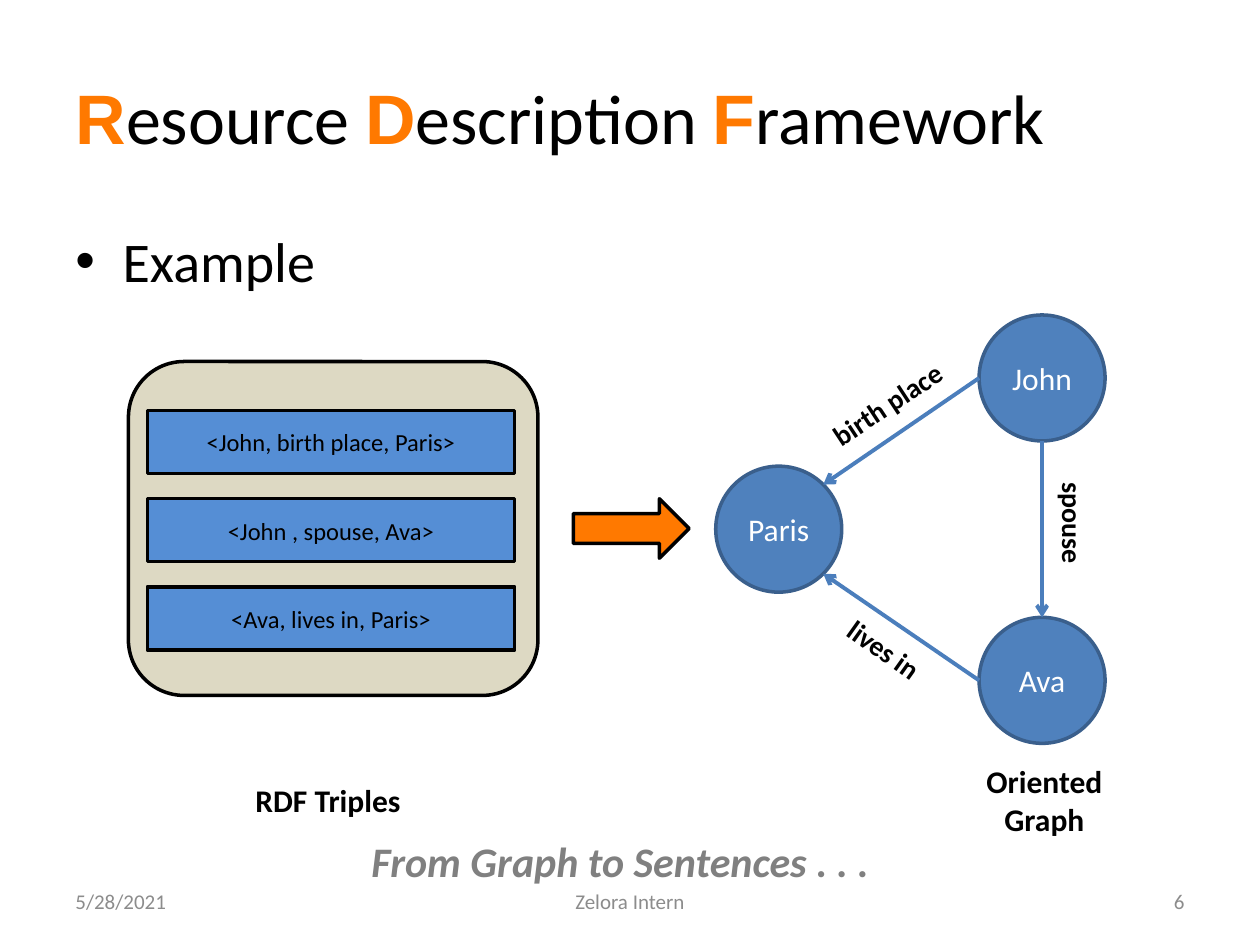
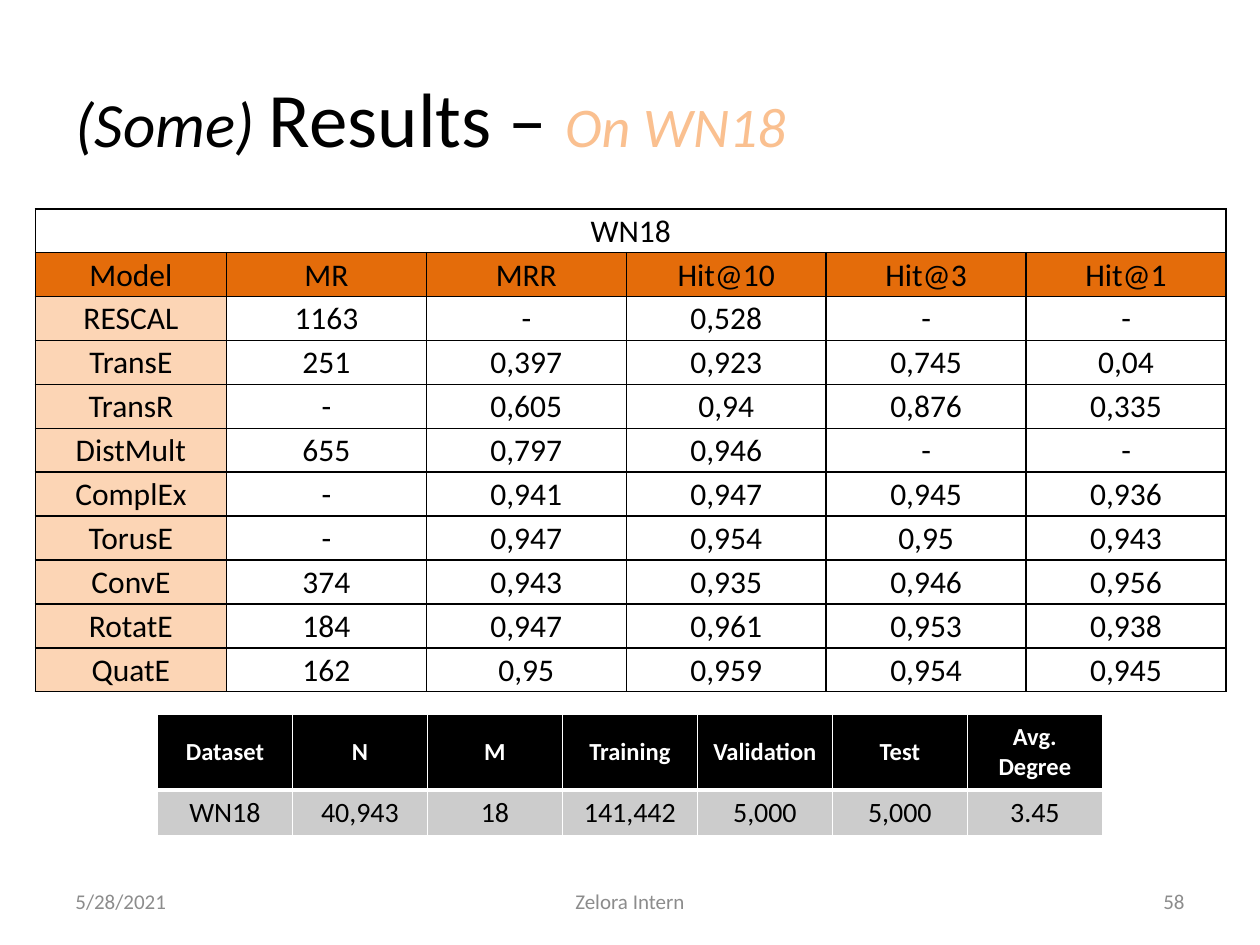
from lxml.etree import SubElement
from pptx import Presentation
from pptx.dml.color import RGBColor
from pptx.enum.shapes import MSO_CONNECTOR, MSO_SHAPE
from pptx.enum.text import MSO_ANCHOR, MSO_AUTO_SIZE, PP_ALIGN
from pptx.oxml.ns import qn
from pptx.util import Pt

FONT = "Calibri"
BLACK, WHITE, GREY, FOOTER_GREY = "000000", "FFFFFF", "808080", "8C8C8C"
ORANGE, HEADER_ORANGE, PALE_ORANGE, TITLE_ORANGE = "FF7900", "E46C0A", "FCD5B5", "FAC090"
BEIGE, TRIPLE_BLUE = "DDD9C3", "558ED5"
NODE_BLUE, NODE_LINE, EDGE_BLUE = "4F81BD", "3A5F8C", "4B7EBC"
DATASET_GREY = "CCCCCC"
LEFT, CENTER, RIGHT = PP_ALIGN.LEFT, PP_ALIGN.CENTER, PP_ALIGN.RIGHT

RESULTS = """Model MR MRR Hit@10 Hit@3 Hit@1
RESCAL 1163 - 0,528 - -
TransE 251 0,397 0,923 0,745 0,04
TransR - 0,605 0,94 0,876 0,335
DistMult 655 0,797 0,946 - -
ComplEx - 0,941 0,947 0,945 0,936
TorusE - 0,947 0,954 0,95 0,943
ConvE 374 0,943 0,935 0,946 0,956
RotatE 184 0,947 0,961 0,953 0,938
QuatE 162 0,95 0,959 0,954 0,945"""

DATASET = [
    ["Dataset", "N", "M", "Training", "Validation", "Test", "Avg. Degree"],
    ["WN18", "40,943", "18", "141,442", "5,000", "5,000", "3.45"],
]


def rgb(code):
    """Turn a hex string into a colour."""
    return RGBColor.from_string(code)


def style(font, size, color=BLACK, bold=False, italic=False, name=FONT):
    """Set the look of a paragraph or run font."""
    font.name, font.size, font.bold, font.italic = name, Pt(size), bold, italic
    font.color.rgb = rgb(color)


def add_text(s, box, text, size, color=BLACK, align=LEFT, anchor=MSO_ANCHOR.TOP,
             rotation=0, **look):
    """Add a wrapped text box with one paragraph per line."""
    tb = s.shapes.add_textbox(*map(Pt, box))
    tb.rotation = rotation
    tf = tb.text_frame
    tf.word_wrap, tf.vertical_anchor, tf.text = True, anchor, text
    for p in tf.paragraphs:
        p.alignment = align
        style(p.font, size, color, **look)
    return tb


def add_block(s, kind, box, fill, line=BLACK, text="", size=14, color=BLACK):
    """Add a filled, outlined preset shape with centred text."""
    sp = s.shapes.add_shape(kind, *map(Pt, box))
    sp.shadow.inherit = False
    sp.fill.solid()
    sp.fill.fore_color.rgb = rgb(fill)
    sp.line.color.rgb, sp.line.width = rgb(line), Pt(2)
    if text:
        tf = sp.text_frame
        tf.text, tf.vertical_anchor = text, MSO_ANCHOR.MIDDLE
        tf.paragraphs[0].alignment = CENTER
        style(tf.paragraphs[0].font, size, color)


def add_edge(s, start, end):
    """Add a straight arrow between two points."""
    c = s.shapes.add_connector(MSO_CONNECTOR.STRAIGHT, *map(Pt, start + end))
    c.line.color.rgb, c.line.width = rgb(EDGE_BLUE), Pt(2.25)
    sp_pr = c._element.spPr
    SubElement(sp_pr.find(qn("a:ln")), qn("a:tailEnd"), type="arrow")
    SubElement(sp_pr, qn("a:effectLst"))


def new_slide(prs, title_runs, number):
    """Add a slide with its mixed-style title and footer."""
    s = prs.slides.add_slide(prs.slide_layouts[5])
    title = s.shapes.title
    title.left, title.top, title.width, title.height = map(Pt, (36, 21.6, 648, 90))
    tf = title.text_frame
    tf.auto_size, tf.vertical_anchor = MSO_AUTO_SIZE.NONE, MSO_ANCHOR.MIDDLE
    p = tf.paragraphs[0]
    p.alignment = LEFT
    for text, look in title_runs:
        r = p.add_run()
        r.text = text
        style(r.font, **look)
    footer = [(36, 168, "5/28/2021", LEFT), (246, 228, "Zelora Intern", CENTER),
              (516, 168, number, RIGHT)]
    for x, w, text, align in footer:
        add_text(s, (x, 500.5, w, 28.75), text, 12, FOOTER_GREY, align, MSO_ANCHOR.MIDDLE)
    return s


def add_bullet(s, box, text):
    """Add a large bulleted line."""
    p = add_text(s, box, "", 32).text_frame.paragraphs[0]
    p.text = text
    p_pr = p._p.get_or_add_pPr()
    p_pr.set("marL", str(Pt(27)))
    p_pr.set("indent", str(-Pt(27)))
    for old in p_pr.findall(qn("a:defRPr")):
        p_pr.remove(old)
    SubElement(p_pr, qn("a:buFont"), typeface="Arial")
    SubElement(p_pr, qn("a:buChar"), char="•")
    style(p.font, 32)


def add_triples(s, x, y, w, h):
    """Draw the panel of triples and its caption."""
    add_block(s, MSO_SHAPE.ROUNDED_RECTANGLE, (x, y, w, h), BEIGE)
    triples = ["<John, birth place, Paris>", "<John , spouse, Ava>", "<Ava, lives in, Paris>"]
    for i, triple in enumerate(triples):
        add_block(s, MSO_SHAPE.RECTANGLE, (x + 10.8, y + 28 + 50.4 * i, 210, 36),
                  TRIPLE_BLUE, text=triple)
    add_text(s, (x + 65.5, y + 236, 102, 29), "RDF Triples", 18, bold=True)


def add_graph(s, x, y, w, h):
    """Draw the oriented graph with its labels and caption."""
    d = 72
    right, middle, bottom = x + w - d, y + (h - d) / 2, y + h - d
    nodes = [("John", right, y), ("Paris", x, middle), ("Ava", right, bottom)]
    for name, nx, ny in nodes:
        add_block(s, MSO_SHAPE.OVAL, (nx, ny, d, d), NODE_BLUE, NODE_LINE, name, 18, WHITE)
    reach = d / 2 * 0.5 ** 0.5
    cx, cy = x + d / 2, middle + d / 2
    add_edge(s, (right, y + d / 2), (cx + reach, cy - reach))
    add_edge(s, (right + d / 2, y + d), (right + d / 2, bottom))
    add_edge(s, (right, bottom + d / 2), (cx + reach, cy + reach))
    labels = [("birth place", 54.7, 35.3, 93.6, 326.6), ("spouse", 170.6, 108.7, 67, 90),
              ("lives in", 65.5, 180, 67, 35.4)]
    for text, dx, dy, lw, angle in labels:
        add_text(s, (x + dx, y + dy, lw, 26.6), text, 16, rotation=angle, bold=True)
    add_text(s, (x + 136.8, y + h + 7, 102, 51), "Oriented\nGraph", 18, align=CENTER, bold=True)


def fill_cell(cell, text, size, fill, color, borders, bold=False):
    """Write one centred table cell with borders given as side: (colour, width)."""
    tc_pr = cell._tc.get_or_add_tcPr()
    for side, (line, width) in borders.items():
        ln = SubElement(tc_pr, qn("a:ln" + side), w=str(Pt(width)))
        SubElement(SubElement(ln, qn("a:solidFill")), qn("a:srgbClr"), val=line)
    if fill:
        cell.fill.solid()
        cell.fill.fore_color.rgb = rgb(fill)
    else:
        cell.fill.background()
    cell.vertical_anchor = MSO_ANCHOR.MIDDLE
    p = cell.text_frame.paragraphs[0]
    p.text, p.alignment = text, CENTER
    style(p.font, size, color, bold)


def add_grid(s, box, col_widths, row_heights):
    """Add a plain table with the given column widths and row heights."""
    table = s.shapes.add_table(len(row_heights), len(col_widths), *map(Pt, box)).table
    table.first_row = table.horz_banding = False
    for col, w in zip(table.columns, col_widths):
        col.width = Pt(w)
    for row, h in zip(table.rows, row_heights):
        row.height = Pt(h)
    return table


def add_results(s, x, y, w, h):
    """Draw the table of model scores."""
    rows = [["WN18"] + [""] * 5] + [line.split() for line in RESULTS.splitlines()]
    first = 109.2
    table = add_grid(s, (x, y, w, h), [first] + [(w - first) / 5] * 5,
                     [h / len(rows)] * len(rows))
    table.cell(0, 0).merge(table.cell(0, 5))
    borders = dict.fromkeys("LRTB", (BLACK, 1))
    for i, row in enumerate(rows):
        for j, text in enumerate(row):
            cell = table.cell(i, j)
            cell.margin_left = cell.margin_right = cell.margin_top = Pt(0.72)
            cell.margin_bottom = Pt(0)
            fill = HEADER_ORANGE if i == 1 else PALE_ORANGE if i and j == 0 else None
            fill_cell(cell, text, 18, fill, BLACK, borders)


def add_dataset(s, x, y, w, h):
    """Draw the table of dataset statistics."""
    n = len(DATASET[0])
    header_h = 43.2
    table = add_grid(s, (x, y, w, h), [w / n] * n, [header_h, h - header_h])
    thin, thick = (WHITE, 1), (WHITE, 3)
    looks = [(14, BLACK, WHITE, dict(L=thin, R=thin, T=thin, B=thick), True),
             (16, DATASET_GREY, BLACK, dict(L=thin, R=thin, T=thick, B=thin), False)]
    for i, (row, look) in enumerate(zip(DATASET, looks)):
        for j, text in enumerate(row):
            fill_cell(table.cell(i, j), text, *look)


def rdf_slide(prs):
    """Build the slide that turns triples into a graph."""
    initial = dict(size=40, color=ORANGE, bold=True, name="Arial")
    title = []
    for word in ("Resource ", "Description ", "Framework"):
        title += [(word[0], initial), (word[1:], dict(size=40))]
    s = new_slide(prs, title, "6")
    add_bullet(s, (36, 126, 648, 356), "Example")
    add_triples(s, 73.4, 206.6, 234, 190.8)
    add_block(s, MSO_SHAPE.RIGHT_ARROW, (327.6, 285, 66.2, 34), ORANGE)
    add_graph(s, 409, 180, 222.5, 244.8)
    add_text(s, (205.2, 473.8, 318, 36), "From Graph to Sentences . . .", 24, GREY,
             bold=True, italic=True)


def results_slide(prs):
    """Build the slide with the scores and the dataset."""
    title = [("(Some) ", dict(size=36, italic=True)), ("Results – ", dict(size=44)),
             ("On WN18", dict(size=32, color=TITLE_ORANGE, italic=True))]
    s = new_slide(prs, title, "58")
    add_results(s, 20.2, 119.3, 680.4, 276)
    add_dataset(s, 90, 408.2, 540, 69.5)


def main():
    """Build and save the presentation."""
    prs = Presentation()
    prs.slide_width, prs.slide_height = Pt(720), Pt(540)
    rdf_slide(prs)
    results_slide(prs)
    prs.save("out.pptx")


if __name__ == "__main__":
    main()
